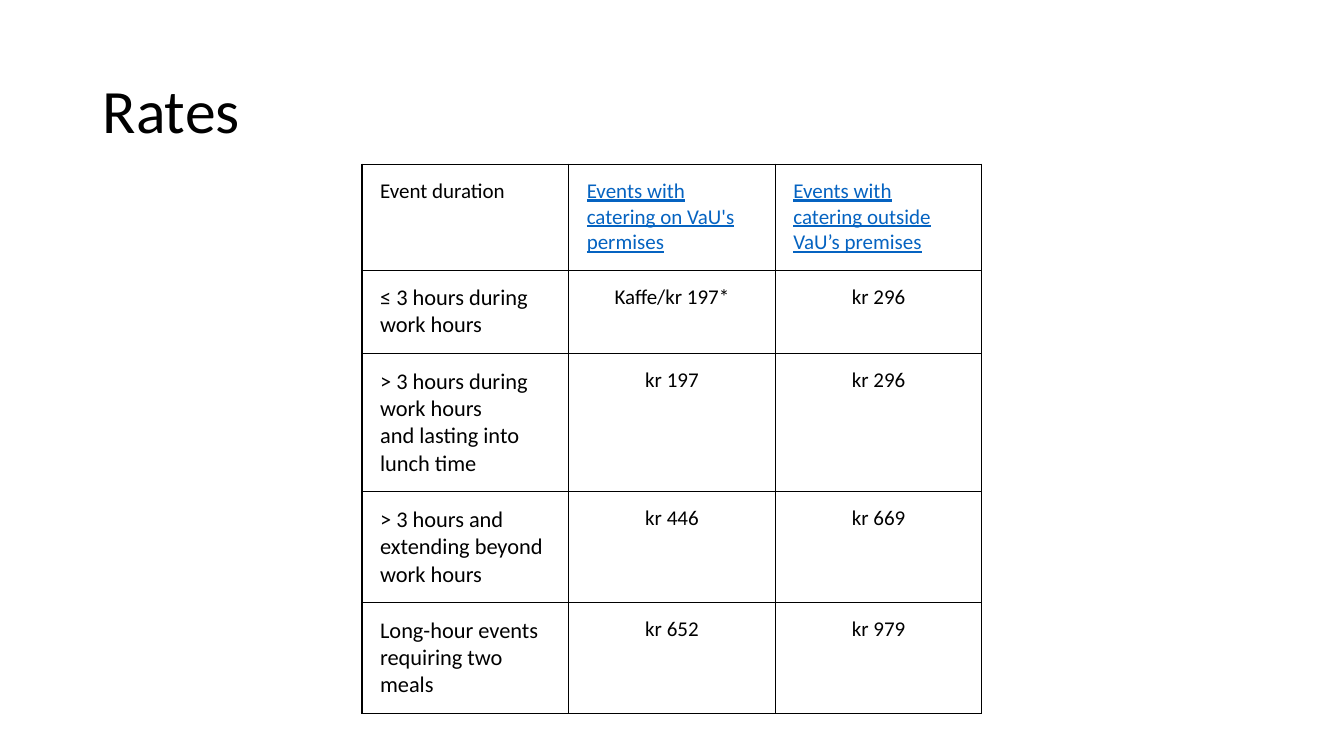
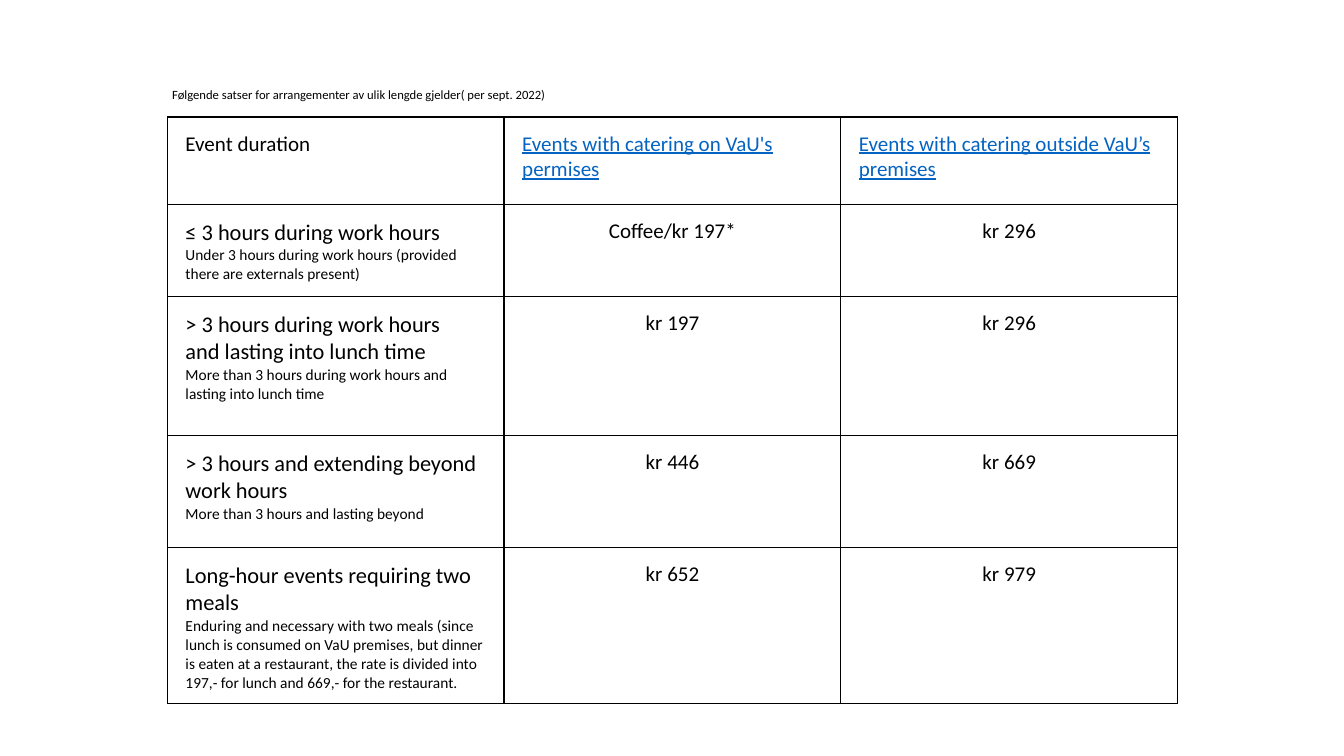
from copy import deepcopy
from dataclasses import dataclass

from lxml import etree
from pptx import Presentation, util as u
from pptx.dml.color import RGBColor
from pptx.enum import text
from pptx.oxml.ns import qn

COLORS = {"ink": "000000", "link": "0563C1"}
FONT = "Calibri"
LEFT, CENTER = text.PP_ALIGN.LEFT, text.PP_ALIGN.CENTER
TOP, MIDDLE = text.MSO_ANCHOR.TOP, text.MSO_ANCHOR.MIDDLE
CELL_MARGINS = {"margin_left": 0.18, "margin_right": 0.18,
                "margin_top": 0.14, "margin_bottom": 0.14}


@dataclass(frozen=True)
class Style:
    size: float
    color: str = "ink"
    underline: bool = False
    align: int = LEFT
    spacing: float = 1.0


TITLE = Style(44, spacing=0.9)
CAPTION = Style(9)
HEADING = Style(15)
LINK = Style(15, color="link", underline=True)
DURATION = Style(16)
DETAIL = Style(11)
PRICE = Style(15, align=CENTER)


@dataclass(frozen=True)
class Label:
    text: str
    style: Style
    box: tuple[float, float, float, float]
    anchor: int = TOP


@dataclass(frozen=True)
class Rate:
    duration: str
    inside: str
    outside: str
    detail: str


@dataclass(frozen=True)
class RateSlide:
    label: Label
    left: float
    top: float
    col_width: float
    row_heights: tuple[float, ...]
    coffee: str
    detailed: bool


HEADINGS = (
    ("Event duration", HEADING),
    ("Events with catering on VaU's permises", LINK),
    ("Events with catering outside VaU’s premises", LINK),
)
RATES = (
    Rate("≤ 3 hours during work hours", "{coffee}/kr 197*", "kr 296",
         "Under 3 hours during work hours (provided there are externals present)"),
    Rate("> 3 hours during work hours\nand lasting into lunch time", "kr 197", "kr 296",
         "More than 3 hours during work hours and lasting into lunch time"),
    Rate("> 3 hours and extending beyond work hours", "kr 446", "kr 669",
         "More than 3 hours and lasting beyond"),
    Rate("Long-hour events requiring two meals", "kr 652", "kr 979",
         "Enduring and necessary with two meals (since lunch is consumed on VaU premises, "
         "but dinner is eaten at a restaurant, the rate is divided into 197,- for lunch "
         "and 669,- for the restaurant."),
)
SLIDES = (
    RateSlide(Label("Rates", TITLE, (0.92, 0.4, 11.5, 1.45), MIDDLE),
              3.59, 1.63, 2.05, (1.05, 0.83, 1.37, 1.1, 1.1), "Kaffe", False),
    RateSlide(Label("Følgende satser for arrangementer av ulik lengde gjelder( per sept. 2022)",
                    CAPTION, (1.61, 0.81, 6.67, 0.71)),
              1.66, 1.16, 3.34, (0.87, 0.91, 1.38, 1.11, 1.55), "Coffee", True),
)


def write(p, content: str, style: Style) -> None:
    p.text = content
    p.alignment = style.align
    p.line_spacing = style.spacing
    formats = {"name": FONT, "size": u.Pt(style.size), "underline": style.underline}
    for r in p.runs:
        for name, value in formats.items():
            setattr(r.font, name, value)
        r.font.color.rgb = RGBColor.from_string(COLORS[style.color])
    for br in p._p.findall(qn("a:br")):
        br.append(deepcopy(p.runs[0]._r.rPr))


def add_label(s, label: Label) -> None:
    sp = s.shapes.add_textbox(*map(u.Inches, label.box))
    tf = sp.text_frame
    tf.word_wrap = True
    tf.vertical_anchor = label.anchor
    write(tf.paragraphs[0], label.text, label.style)


def add_borders(cell, widths: dict[str, float]) -> None:
    tc_pr = cell._tc.get_or_add_tcPr()
    for side, width in widths.items():
        ln = etree.SubElement(tc_pr, qn(f"a:ln{side}"), w=str(u.Pt(width)))
        fill = etree.SubElement(ln, qn("a:solidFill"))
        etree.SubElement(fill, qn("a:srgbClr"), val=COLORS["ink"])


def fill_cell(cell, lines: list[tuple[str, Style]], widths: dict[str, float]) -> None:
    for name, value in CELL_MARGINS.items():
        setattr(cell, name, u.Inches(value))
    add_borders(cell, widths)
    cell.fill.background()
    tf = cell.text_frame
    for i, (content, style) in enumerate(lines):
        write(tf.add_paragraph() if i else tf.paragraphs[0], content, style)


def rate_rows(spec: RateSlide) -> list[list[list[tuple[str, Style]]]]:
    rows = [[[heading] for heading in HEADINGS]]
    for rate in RATES:
        duration = [(rate.duration, DURATION)]
        if spec.detailed:
            duration.append((rate.detail, DETAIL))
        inside = rate.inside.format(coffee=spec.coffee)
        rows.append([duration, [(inside, PRICE)], [(rate.outside, PRICE)]])
    return rows


def add_rate_table(s, spec: RateSlide) -> None:
    rows = rate_rows(spec)
    n_rows, n_cols = len(rows), len(HEADINGS)
    box = (spec.left, spec.top, spec.col_width * n_cols, sum(spec.row_heights))
    table = s.shapes.add_table(n_rows, n_cols, *map(u.Inches, box)).table
    table.first_row = table.horz_banding = False
    for column in table.columns:
        column.width = u.Inches(spec.col_width)
    for i, row in enumerate(rows):
        table.rows[i].height = u.Inches(spec.row_heights[i])
        for j, lines in enumerate(row):
            widths = {"L": 1, "R": 0.75 if j == n_cols - 1 else 1,
                      "T": 1, "B": 0.75 if i == n_rows - 1 else 1}
            fill_cell(table.cell(i, j), lines, widths)


def main() -> None:
    prs = Presentation()
    prs.slide_width, prs.slide_height = u.Inches(13.33), u.Inches(7.5)
    for spec in SLIDES:
        s = prs.slides.add_slide(prs.slide_layouts[6])
        add_label(s, spec.label)
        add_rate_table(s, spec)
    prs.save("out.pptx")


if __name__ == "__main__":
    main()
